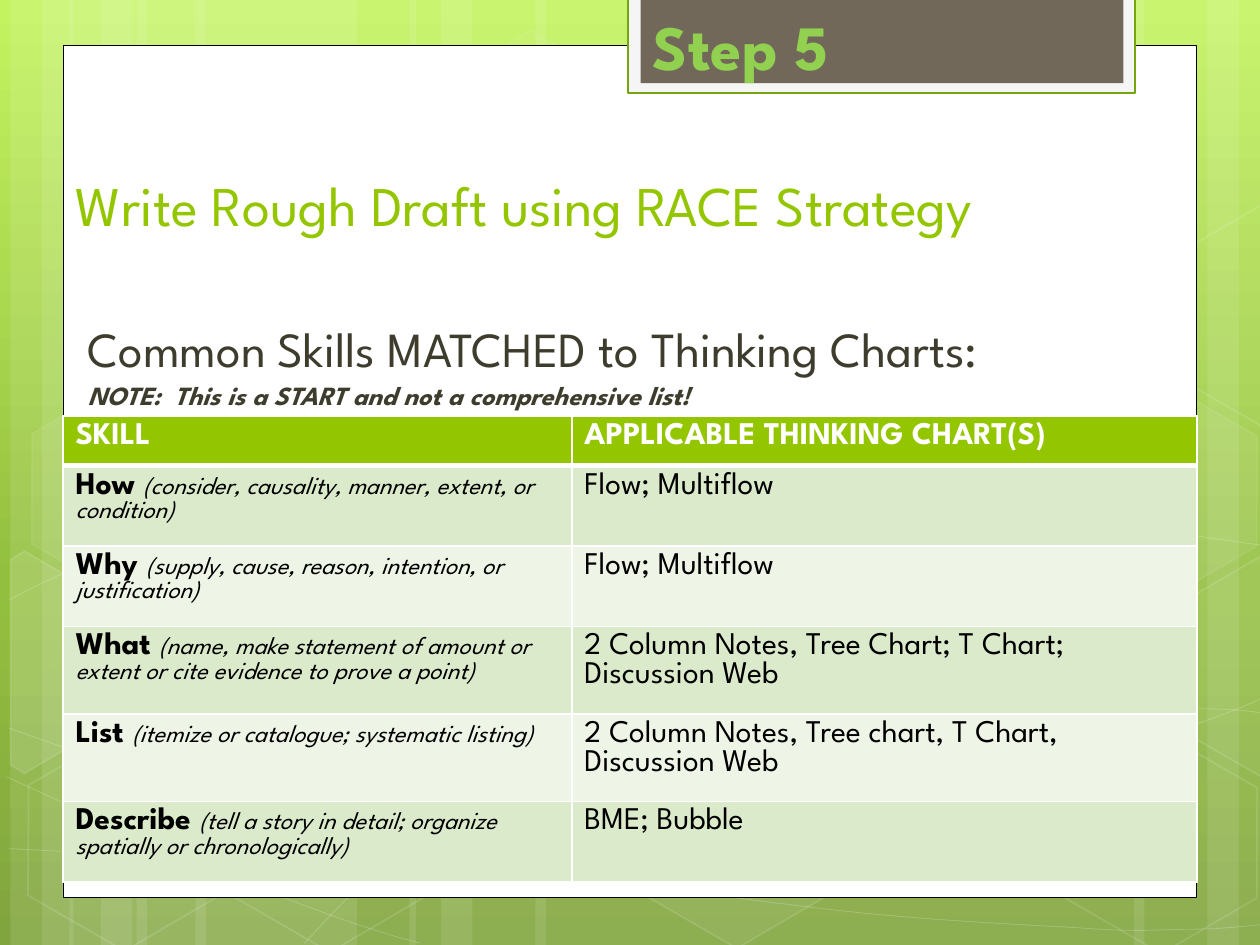
import math

import lxml.etree
import pptx
import pptx.dml.color
import pptx.enum.shapes
import pptx.enum.text
import pptx.oxml.ns
import pptx.util
import copy

Pt = pptx.util.Pt
qn = pptx.oxml.ns.qn
SHAPE = pptx.enum.shapes.MSO_SHAPE
ANCHOR = pptx.enum.text.MSO_ANCHOR
FONT = "League Spartan"
COLORS = {
    "white": "FFFFFF", "black": "000000", "green": "94C600", "lime": "92D050",
    "edge": "74A510", "frame": "F5F5F5", "brown": "71685A", "text": "3E3D2D",
    "band": "DCEACC", "pale": "EEF5E7",
    "sky": "C3F35F", "leaf": "93BF3F", "moss": "81A53E",
}
BANDS = [(78, 126), (6, 36), (24, 60), (111.6, 126), (39.6, 36), (57.6, 60),
         (528, 126), (690, 36), (648, 60), (306, 222), (234, 36), (252, 60)]
CURVES = [
    [(5, 485), (44, 487), (83, 489), (137, 488), (191, 487), (258, 486), (330, 479),
     (402, 472), (504, 458), (570, 444), (636, 431), (703, 409), (725, 397)],
    [(5, 343), (26, 332), (47, 321), (87, 310), (128, 300), (186, 284), (250, 279),
     (314, 274), (392, 273), (471, 279), (550, 284), (682, 307), (725, 312)],
    [(4, 444), (91, 484), (178, 523), (240, 539)],
    [(5, 416), (27, 424), (50, 432), (92, 444), (134, 454), (197, 472), (257, 485),
     (317, 497), (392, 510), (452, 517), (512, 525), (576, 528), (614, 530),
     (652, 533), (662, 531), (680, 531), (699, 531), (712, 529), (725, 528)],
    [(174, 539), (187, 525), (200, 510), (217, 498), (235, 485), (259, 470), (279, 460),
     (300, 450), (312, 446), (338, 438), (364, 431), (413, 421), (438, 416),
     (464, 411), (467, 411), (490, 410), (512, 408), (547, 405), (572, 405),
     (597, 404), (638, 405), (638, 405), (654, 405), (670, 405), (686, 405),
     (699, 405), (711, 406), (718, 407), (724, 408), (722, 408), (724, 408)],
]
HEXAGONS = [(240.5, 26, 4, 8), (357.8, 424, 6, 12), (7.9, 425.5, 0, 12),
            (10, 224.6, 7, 8), (125.3, 426.2, 0, 12), (542.2, 326.2, 10, 12),
            (600.5, 427, 0, 12), (600.5, 226, 7, 8)]
LEFT_EDGE = [(6, 320), (14, 315), (69, 347), (68, 410), (14, 442), (6, 437)]
RIGHT_EDGE = [(667, 349), (721, 317.5), (726, 321), (726, 441), (721, 444), (667, 413)]
SKILLS = [
    ("How ", "(consider, causality, manner, extent, or condition)", "Flow; Multiflow", 46),
    ("Why ", "(supply, cause, reason, intention, or justification)", "Flow; Multiflow", 46),
    ("What ", "(name, make statement of amount or extent or cite evidence to prove a point)",
     "2 Column Notes, Tree Chart; T Chart; Discussion Web", 50),
    ("List ", "(itemize or catalogue; systematic listing)",
     "2 Column Notes, Tree chart, T Chart, Discussion Web", 50),
    ("Describe ", "(tell a story in detail; organize spatially or chronologically)",
     "BME; Bubble", 46),
]


def rgb(name):
    """Return the named colour."""
    return pptx.dml.color.RGBColor.from_string(COLORS[name])


def write(p, text, size=18, color="black", bold=False, italic=False):
    """Add a formatted run to a paragraph."""
    r = p.add_run()
    r.text = text
    r.font.name, r.font.size = FONT, Pt(size)
    r.font.bold, r.font.italic = bold, italic
    r.font.color.rgb = rgb(color)


def paint(fill, color, alpha=100):
    """Give a fill a solid colour with an opacity in percent."""
    if not alpha:
        fill.background()
        return
    fill.solid()
    fill.fore_color.rgb = rgb(color)
    if alpha < 100:
        clr = fill._xPr.find(".//" + qn("a:srgbClr"))
        lxml.etree.SubElement(clr, qn("a:alpha"), val=str(alpha * 1000))


def unrotate(points, degrees):
    """Turn points back about the centre of the box they fill before rotation."""
    c, n = math.cos(math.radians(degrees)), math.sin(math.radians(degrees))
    flat = [(x * c + y * n, y * c - x * n) for x, y in points]
    mx, my = ((min(axis) + max(axis)) / 2 for axis in zip(*flat))
    cx, cy = mx * c - my * n, mx * n + my * c
    return [(x - mx + cx, y - my + cy) for x, y in flat]


class Deck:
    """Hold the style and the current slide."""

    def __init__(self):
        """Start a one-slide presentation."""
        self.prs = pptx.Presentation()
        self.prs.slide_width, self.prs.slide_height = Pt(720), Pt(540)
        self.s = self.prs.slides.add_slide(self.prs.slide_layouts[1])

    def background(self, stops):
        """Fill the background with a vertical gradient."""
        fill = self.s.background.fill
        fill.gradient()
        fill.gradient_angle = 270
        gs_list = self.s.element.find(".//" + qn("a:gsLst"))
        gs_list.append(copy.deepcopy(gs_list[-1]))
        for stop, (color, position) in zip(fill.gradient_stops, stops):
            stop.color.rgb, stop.position = rgb(color), position

    def style(self, sp, fill, alpha, line, width, line_alpha):
        """Set the fill and outline of a shape."""
        sp.shadow.inherit = False
        paint(sp.fill, fill, alpha)
        paint(sp.line.fill, line, line_alpha)
        if line_alpha:
            sp.line.width = Pt(width)

    def shape(self, kind, box, fill="white", alpha=100, line="white", width=1, line_alpha=0):
        """Add a preset shape."""
        sp = self.s.shapes.add_shape(kind, *map(Pt, box))
        self.style(sp, fill, alpha, line, width, line_alpha)
        return sp

    def outline(self, points, alpha=0, width=1.0, line_alpha=12, close=True):
        """Add a freeform through the given points."""
        start, *rest = [(Pt(x), Pt(y)) for x, y in points]
        builder = self.s.shapes.build_freeform(*start)
        builder.add_line_segments(rest, close=close)
        sp = builder.convert_to_shape()
        self.style(sp, "white", alpha, "white", width, line_alpha)
        return sp

    def polygon(self, points, alpha=0):
        """Add a closed outline turned by 30 degrees."""
        self.outline(unrotate(points, 30), alpha).rotation = 30

    def curve(self, points):
        """Add an open chain of cubic curves."""
        sp = self.outline(points, width=0.5, line_alpha=20, close=False)
        lines = list(sp.element.iter(qn("a:lnTo")))
        for i in range(0, len(lines), 3):
            cubic = lxml.etree.Element(qn("a:cubicBezTo"))
            lines[i].addprevious(cubic)
            for line in lines[i:i + 3]:
                cubic.append(line[0])
                line.getparent().remove(line)

    def placeholder(self, index, box, anchor, bottom=7.2):
        """Bring a placeholder to the front, place it and return its text frame."""
        sp = self.s.placeholders[index]
        sp.element.getparent().append(sp.element)
        sp.left, sp.top, sp.width, sp.height = map(Pt, box)
        return self.frame(sp, anchor, 7.2, bottom)

    def frame(self, sp, anchor, top, bottom):
        """Set up the text frame of a shape."""
        tf = sp.text_frame
        tf.word_wrap, tf.vertical_anchor = True, anchor
        tf.auto_size = pptx.enum.text.MSO_AUTO_SIZE.NONE
        tf.margin_left = tf.margin_right = Pt(7.2)
        tf.margin_top, tf.margin_bottom = Pt(top), Pt(bottom)
        return tf

    def label(self, box, text, **fmt):
        """Add a text box that sits on its bottom edge."""
        sp = self.s.shapes.add_textbox(*map(Pt, box))
        tf = self.frame(sp, ANCHOR.BOTTOM, 3.6, 3.6)
        write(tf.paragraphs[0], text, **fmt)

    def cell(self, cell, fill, runs, bottom=1):
        """Format a table cell and write its runs."""
        tc_pr = cell._tc.get_or_add_tcPr()
        for side in "LRTB":
            width = bottom if side == "B" else 1
            ln = lxml.etree.SubElement(tc_pr, qn("a:ln" + side), w=str(Pt(width)))
            solid = lxml.etree.SubElement(ln, qn("a:solidFill"))
            lxml.etree.SubElement(solid, qn("a:srgbClr"), val=COLORS["white"])
        paint(cell.fill, fill)
        for text, fmt in runs:
            write(cell.text_frame.paragraphs[0], text, **fmt)

    def skill_table(self, box, widths, header, rows):
        """Add the table of skills and charts."""
        table = self.s.shapes.add_table(len(rows) + 1, 2, *map(Pt, box)).table
        table.horz_banding = False
        for column, width in zip(table.columns, widths):
            column.width = Pt(width)
        table.rows[0].height = Pt(28.4)
        for i, text in enumerate(header):
            self.cell(table.cell(0, i), "green", [(text, dict(color="white", bold=True))], 3)
        for i, (skill, detail, charts, height) in enumerate(rows, 1):
            table.rows[i].height = Pt(height)
            fill = "band" if i % 2 else "pale"
            self.cell(table.cell(i, 0), fill,
                      [(skill, dict(bold=True)), (detail, dict(size=14, italic=True))])
            self.cell(table.cell(i, 1), fill, [(charts, {})])


def main():
    """Build the slide."""
    d = Deck()
    d.background([("sky", 0), ("leaf", 0.62), ("moss", 1)])
    for x, width in BANDS:
        d.shape(SHAPE.RECTANGLE, (x, 0, width, 540), alpha=10)
    for curve in CURVES:
        d.curve(curve)
    for x, y, alpha, line_alpha in HEXAGONS:
        sp = d.shape(SHAPE.HEXAGON, (x, y, 126, 109.4), alpha=alpha, line_alpha=line_alpha)
        sp.adjustments[0], sp.rotation = 0.285, 30
    d.polygon(LEFT_EDGE, alpha=10)
    d.polygon(RIGHT_EDGE, alpha=4)
    d.polygon([(x, y - 200.5) for x, y in RIGHT_EDGE])
    d.shape(SHAPE.RECTANGLE, (36, 26, 648, 487), line="black", width=0.5, line_alpha=100)
    d.shape(SHAPE.RECTANGLE, (359, -1.5, 289.5, 54.7), "frame",
            line="edge", width=1.25, line_alpha=100)
    d.shape(SHAPE.RECTANGLE, (366, -1.5, 276, 49), "brown")

    p = d.placeholder(0, (36, 72, 648, 90), ANCHOR.BOTTOM, bottom=26.3).paragraphs[0]
    p.alignment = pptx.enum.text.PP_ALIGN.LEFT
    write(p, "Write Rough Draft using RACE Strategy", size=32, color="green")

    tf = d.placeholder(1, (37.5, 175, 648, 376.5), ANCHOR.TOP)
    notes = [("Common Skills MATCHED to Thinking Charts:", 0, dict(size=28)),
             ("NOTE:  This is a START and not a comprehensive list!", 1,
              dict(size=15, bold=True, italic=True))]
    for i, (text, before, fmt) in enumerate(notes):
        p = tf.add_paragraph() if i else tf.paragraphs[0]
        p.space_before = Pt(before)
        p_pr = p._p.get_or_add_pPr()
        p_pr.set("marL", str(Pt(5.5)))
        p_pr.set("indent", "0")
        lxml.etree.SubElement(p_pr, qn("a:buNone"))
        write(p, text, color="text", **fmt)

    d.label((366, 0, 276, 51), "Step 5", size=36, color="lime", bold=True)
    d.skill_table((36, 237.7, 648, 266), (290.8, 357.2),
                  ("SKILL", "APPLICABLE THINKING CHART(S)"), SKILLS)
    d.prs.save("out.pptx")


if __name__ == "__main__":
    main()
